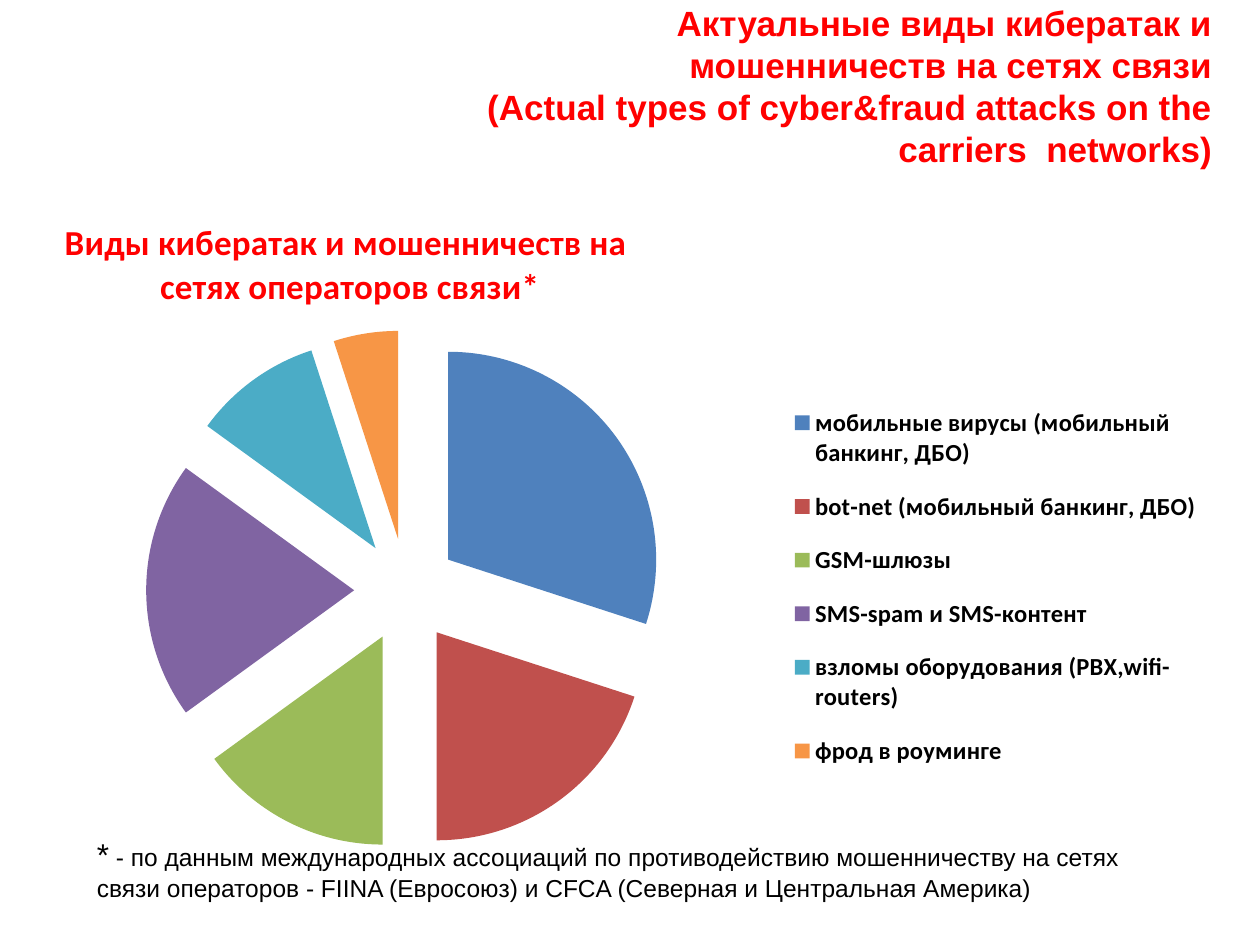
import pptx
import pptx.chart.data
import pptx.dml.color
import pptx.enum.chart
import pptx.enum.text
import pptx.oxml
import pptx.oxml.ns
import pptx.util
from pptx.util import Inches

COLORS = {"red": "FF0000", "black": "000000"}
ATTACKS = [
    ("мобильные вирусы (мобильный банкинг, ДБО)", 30, "4F81BD"),
    ("bot-net (мобильный банкинг, ДБО)", 20, "C0504D"),
    ("GSM-шлюзы", 15, "9BBB59"),
    ("SMS-spam и SMS-контент", 20, "8064A2"),
    ("взломы оборудования (PBX,wifi-routers)", 10, "4BACC6"),
    ("фрод в роуминге", 5, "F79646"),
]


def rgb(value):
    return pptx.dml.color.RGBColor.from_string(value)


def set_font(font, size, color="black", name="Arial", bold=False):
    font.size = pptx.util.Pt(size)
    font.name = name
    font.bold = bold
    font.color.rgb = rgb(COLORS[color])


def add_text(p, text, **fmt):
    """Append text to a paragraph; newlines become line breaks."""
    for i, line in enumerate(text.split("\n")):
        if i:
            p.add_line_break()
        r = p.add_run()
        r.text = line
        set_font(r.font, **fmt)


def place(sp, left, top, width, height):
    sp.left, sp.top = Inches(left), Inches(top)
    sp.width, sp.height = Inches(width), Inches(height)


def chart_element(tag, content="", attrs=""):
    ns = pptx.oxml.ns.nsdecls("c")
    return pptx.oxml.parse_xml(f"<c:{tag} {ns} {attrs}>{content}</c:{tag}>")


def set_layout(parent, after=None, inner=False, **fractions):
    """Position a chart part by fractions of the chart's size."""
    for old in parent.findall(pptx.oxml.ns.qn("c:layout")):
        parent.remove(old)
    content = '<c:layoutTarget val="inner"/>' if inner else ""
    content += "".join(f'<c:{k}Mode val="edge"/>' for k in ("x", "y"))
    content += "".join(f'<c:{k} val="{v}"/>' for k, v in fractions.items())
    layout = chart_element("layout", f"<c:manualLayout>{content}</c:manualLayout>")
    if after is None:
        parent.insert(0, layout)
    else:
        parent.find(pptx.oxml.ns.qn(after)).addnext(layout)


def add_title(slide):
    sp = slide.shapes.title
    place(sp, 3.04, 0.28, 6.68, 0.79)
    tf = sp.text_frame
    tf.auto_size = pptx.enum.text.MSO_AUTO_SIZE.NONE
    tf.vertical_anchor = pptx.enum.text.MSO_ANCHOR.MIDDLE
    p = tf.paragraphs[0]
    p.alignment = pptx.enum.text.PP_ALIGN.RIGHT
    add_text(p, "Актуальные виды кибератак и\nмошенничеств на сетях связи\n"
             "(Actual types of cyber&fraud attacks on the carriers  networks)",
             size=20, color="red", bold=True)


def add_footnote(slide):
    sp = slide.shapes.add_textbox(Inches(0.67), Inches(6.58), Inches(8.77), Inches(0.64))
    tf = sp.text_frame
    tf.word_wrap = True
    tf.auto_size = pptx.enum.text.MSO_AUTO_SIZE.SHAPE_TO_FIT_TEXT
    p = tf.paragraphs[0]
    add_text(p, "*", size=18)
    add_text(p, " - по данным международных ассоциаций по противодействию "
             "мошенничеству на сетях связи операторов - FIINA (Евросоюз) и "
             "CFCA (Северная и Центральная Америка)", size=14)


def add_pie(slide):
    data = pptx.chart.data.CategoryChartData()
    data.categories = [name for name, _, _ in ATTACKS]
    data.add_series("Series 1", [share for _, share, _ in ATTACKS])
    chart = slide.shapes.add_chart(
        pptx.enum.chart.XL_CHART_TYPE.PIE, Inches(0.2), Inches(1.55),
        Inches(9.45), Inches(5.36), data).chart
    set_font(chart.font, 10, name="Calibri")

    # Chart title
    chart.has_title = True
    title = chart.chart_title
    add_text(title.text_frame.paragraphs[0],
             "Виды кибератак и мошенничеств на \nсетях операторов связи*",
             size=20, color="red", name="Calibri", bold=True)
    set_layout(title._element, after="c:tx", x=0.03, y=0.03)

    # Exploded slices
    plot = chart.plots[0]
    plot.vary_by_categories = True
    series = plot.series[0]
    for i, (_, _, color) in enumerate(ATTACKS):
        fill = series.points[i].format.fill
        fill.solid()
        fill.fore_color.rgb = rgb(color)
    series._element.find(pptx.oxml.ns.qn("c:tx")).addnext(
        chart_element("explosion", attrs='val="25"'))
    set_layout(plot._element.getparent(), inner=True, x=0.1, y=0.2, w=0.44, h=0.77)

    # Legend
    chart.has_legend = True
    legend = chart.legend
    legend.position = pptx.enum.chart.XL_LEGEND_POSITION.RIGHT
    legend.include_in_layout = False
    set_font(legend.font, 14, name="Calibri", bold=True)
    set_layout(legend._element, after="c:legendPos", x=0.64, y=0.28, w=0.35, h=0.6)


def main():
    prs = pptx.Presentation()
    prs.slide_width, prs.slide_height = Inches(10), Inches(7.5)
    slide = prs.slides.add_slide(prs.slide_layouts[5])
    add_title(slide)
    add_footnote(slide)
    add_pie(slide)
    prs.save("out.pptx")


if __name__ == "__main__":
    main()
